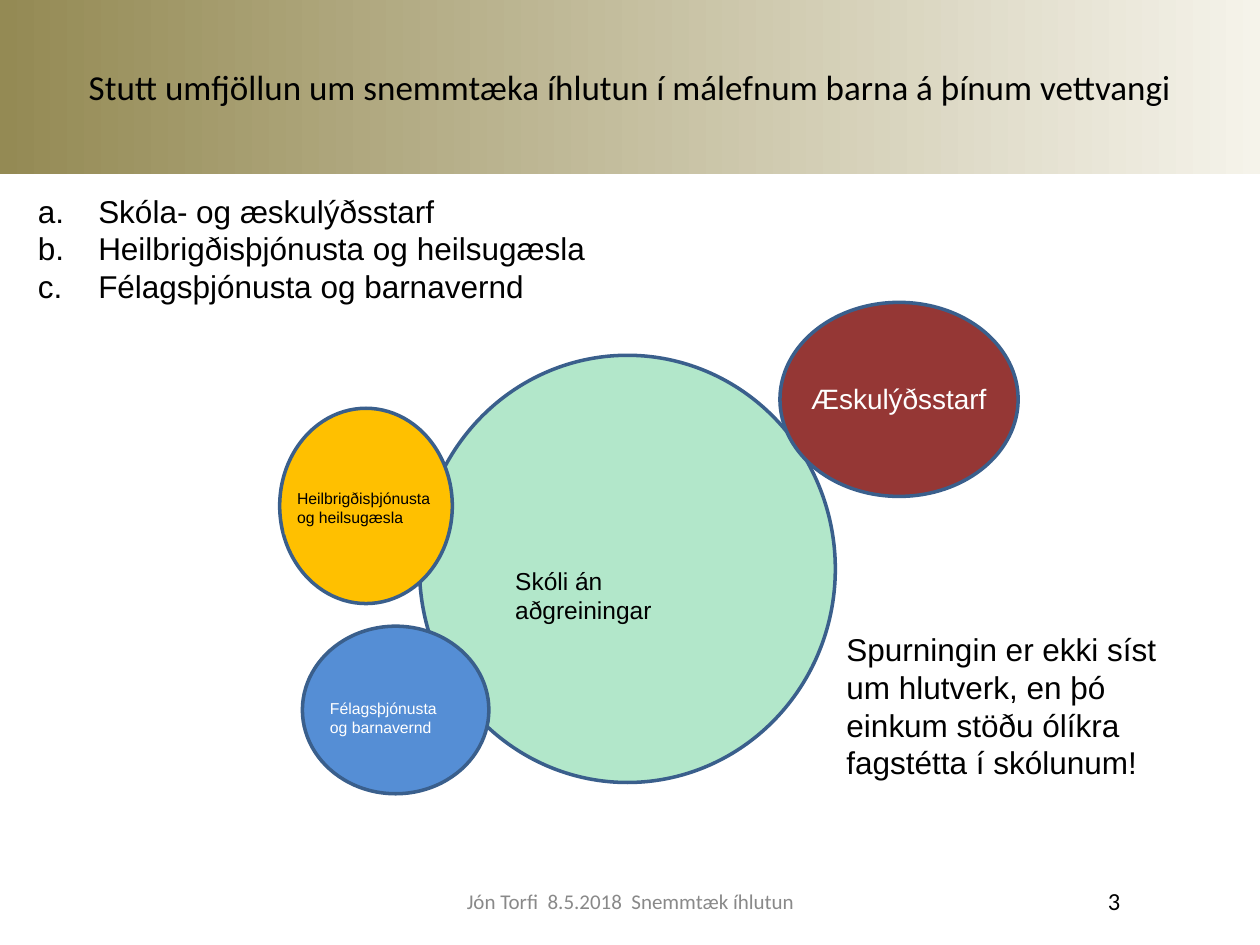
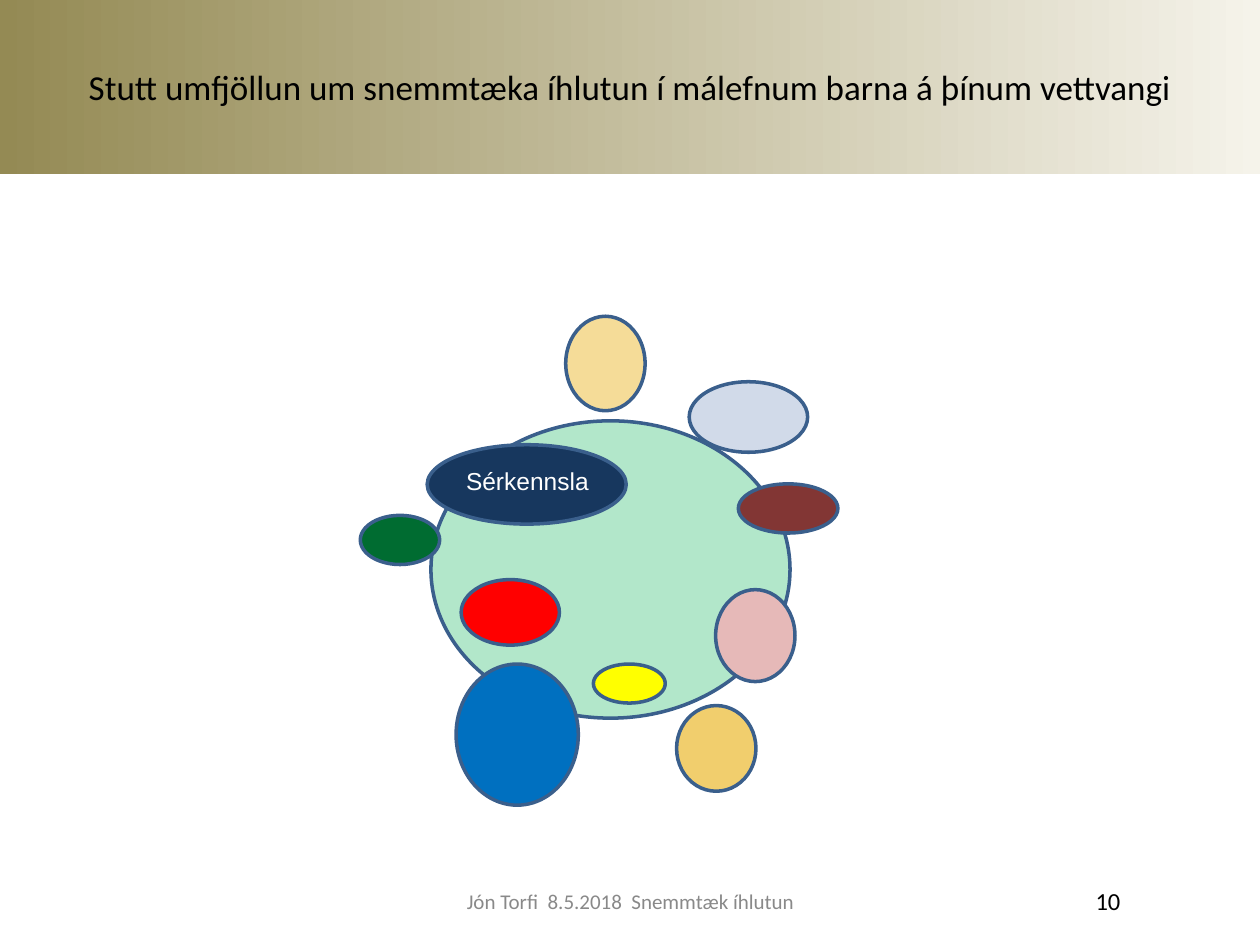
from dataclasses import dataclass
from typing import Optional

from lxml import etree
from pptx import Presentation
from pptx.dml.color import RGBColor
from pptx.enum import shapes, text
from pptx.oxml import ns
from pptx.util import Inches, Pt


@dataclass(frozen=True)
class Theme:
    """Colours, fonts and type sizes shared by the slides."""
    band_start: str = "948A54"
    band_end: str = "F5F3EA"
    outline: str = "3A5F8C"
    school: str = "00B050"
    sand: str = "F1CE6D"
    health: str = "FFC000"
    social: str = "558ED5"
    youth: str = "953735"
    black: str = "000000"
    white: str = "FFFFFF"
    muted: str = "898989"
    heading_font: str = "Calibri"
    body_font: str = "Arial"
    title_size: int = 20
    body_size: int = 18
    large_label: int = 16
    label: int = 14
    footer: int = 12
    small_label: int = 9
    outline_width: int = 2


THEME = Theme()
TITLE = "Stutt umfjöllun um snemmtæka íhlutun í málefnum barna á þínum vettvangi"
FOOTER = "Jón Torfi  8.5.2018  Snemmtæk íhlutun"
TITLE_AND_BODY, TITLE_ONLY = 1, 5

Box = tuple[float, float, float, float]


@dataclass(frozen=True)
class Label:
    words: str
    box: Box
    size: int
    color: str = THEME.white
    fill: Optional[str] = None


@dataclass(frozen=True)
class Bubble:
    box: Box
    fill: str
    opacity: int = 100
    label: Optional[Label] = None


FIELDS = [
    "Skóla- og æskulýðsstarf",
    "Heilbrigðisþjónusta og heilsugæsla",
    "Félagsþjónusta og barnavernd",
]
SERVICE_BUBBLES = [
    Bubble((3.33, 2.82, 3.3, 3.39), THEME.school, 30,
           Label("Skóli án aðgreiningar", (3.99, 4.44, 1.98, 0.32), THEME.label, THEME.black)),
    Bubble((6.19, 2.4, 1.89, 1.54), THEME.youth,
           label=Label("Æskulýðsstarf", (6.34, 2.98, 1.73, 0.37), THEME.large_label)),
    Bubble((2.4, 4.97, 1.48, 1.33), THEME.social,
           label=Label("Félagsþjónusta og barnavernd", (2.52, 5.5, 1.21, 0.4),
                       THEME.small_label, fill=THEME.social)),
    Bubble((2.22, 3.24, 1.37, 1.55), THEME.health,
           label=Label("Heilbrigðisþjónusta og heilsugæsla", (2.26, 3.83, 1.27, 0.41),
                       THEME.small_label, THEME.black, THEME.health)),
]
QUESTION = Label(
    "Spurningin er ekki síst um hlutverk, en þó einkum stöðu ólíkra fagstétta í skólunum!",
    (6.62, 4.95, 2.76, 1.31), THEME.body_size, THEME.black, THEME.white)
SCHOOL_BUBBLES = [
    Bubble((3.42, 3.34, 2.85, 2.36), THEME.school, 30),
    Bubble((4.49, 2.51, 0.63, 0.75), THEME.sand, 70),
    Bubble((2.86, 4.09, 0.63, 0.39), "006C31"),
    Bubble((3.66, 4.6, 0.78, 0.52), "FF0000"),
    Bubble((3.62, 5.27, 0.97, 1.12), "0070C0"),
    Bubble((4.71, 5.27, 0.57, 0.31), "FFFF00"),
    Bubble((5.37, 5.6, 0.63, 0.68), THEME.sand),
    Bubble((5.68, 4.68, 0.63, 0.73), "E6B9B8"),
    Bubble((5.86, 3.84, 0.79, 0.39), "823634"),
    Bubble((5.47, 3.03, 0.94, 0.56), "D1DAE9"),
    Bubble((3.39, 3.53, 1.58, 0.63), "17375E",
           label=Label("Sérkennsla", (3.6, 3.65, 1.32, 0.34), THEME.label)),
]


# Formatting helpers
def apply(target, values: dict) -> None:
    for name, value in values.items():
        setattr(target, name, value)


def place(shape, box: Box) -> None:
    apply(shape, dict(zip(("left", "top", "width", "height"), map(Inches, box))))


def paint(shape, color: str, opacity: int = 100) -> None:
    shape.fill.solid()
    shape.fill.fore_color.rgb = RGBColor.from_string(color)
    if opacity < 100:
        color_element = shape.fill._xPr.find(f".//{ns.qn('a:srgbClr')}")
        etree.SubElement(color_element, ns.qn("a:alpha"), val=str(opacity * 1000))


def write(paragraph, words: str, size: int, color: str, font: str,
          align=text.PP_ALIGN.LEFT) -> None:
    apply(paragraph, {"alignment": align, "space_before": Pt(0)})
    run = paragraph.add_run()
    run.text = words
    apply(run.font, {"name": font, "size": Pt(size)})
    run.font.color.rgb = RGBColor.from_string(color)


# Repeated elements
def add_label(container, label: Label) -> None:
    shape = container.add_textbox(*map(Inches, label.box))
    apply(shape.text_frame, {"word_wrap": True,
                             "auto_size": text.MSO_AUTO_SIZE.SHAPE_TO_FIT_TEXT})
    if label.fill:
        paint(shape, label.fill)
    write(shape.text_frame.paragraphs[0], label.words, label.size, label.color,
          THEME.body_font)


def add_bubble(slide, bubble: Bubble) -> None:
    container = slide.shapes.add_group_shape().shapes if bubble.label else slide.shapes
    shape = container.add_shape(shapes.MSO_SHAPE.OVAL, *map(Inches, bubble.box))
    shape.shadow.inherit = False
    paint(shape, bubble.fill, bubble.opacity)
    shape.line.color.rgb = RGBColor.from_string(THEME.outline)
    shape.line.width = Pt(THEME.outline_width)
    if bubble.label:
        add_label(container, bubble.label)


def add_footer(slide, words: str, box: Box, size: int, color: str, align) -> None:
    shape = slide.shapes.add_textbox(*map(Inches, box))
    apply(shape.text_frame, {"word_wrap": True,
                             "vertical_anchor": text.MSO_ANCHOR.MIDDLE})
    write(shape.text_frame.paragraphs[0], words, size, color, THEME.heading_font, align)


def add_framed_slide(presentation, layout: int, number: int):
    """Add a slide with the title band, the footer and its number."""
    slide = presentation.slides.add_slide(presentation.slide_layouts[layout])
    title = slide.shapes.title
    place(title, (0, 0, 10, 1.38))
    title.fill.gradient()
    title.fill.gradient_angle = 0
    for stop, color in zip(title.fill.gradient_stops, (THEME.band_start, THEME.band_end)):
        stop.color.rgb = RGBColor.from_string(color)
    apply(title.text_frame, {"word_wrap": True, "auto_size": text.MSO_AUTO_SIZE.NONE,
                             "vertical_anchor": text.MSO_ANCHOR.MIDDLE})
    write(title.text_frame.paragraphs[0], TITLE, THEME.title_size, THEME.black,
          THEME.heading_font, text.PP_ALIGN.CENTER)
    add_footer(slide, FOOTER, (3.42, 6.95, 3.17, 0.4), THEME.footer, THEME.muted,
               text.PP_ALIGN.CENTER)
    add_footer(slide, str(number), (7.17, 6.95, 1.82, 0.4), THEME.label, THEME.black,
               text.PP_ALIGN.RIGHT)
    return slide


def fill_lettered_list(body, items: list[str]) -> None:
    place(body, (0.2, 1.47, 5, 1.01))
    frame = body.text_frame
    apply(frame, {"word_wrap": True, "auto_size": text.MSO_AUTO_SIZE.NONE})
    for index, item in enumerate(items):
        paragraph = frame.add_paragraph() if index else frame.paragraphs[0]
        write(paragraph, item, THEME.body_size, THEME.black, THEME.body_font)
        properties = paragraph._p.get_or_add_pPr()
        indent = Inches(0.48)
        properties.set("marL", str(indent))
        properties.set("indent", str(-indent))
        etree.SubElement(properties, ns.qn("a:buFont"), typeface=THEME.body_font)
        etree.SubElement(properties, ns.qn("a:buAutoNum"), type="alphaLcPeriod")


def main() -> None:
    presentation = Presentation()
    apply(presentation, {"slide_width": Inches(10), "slide_height": Inches(7.5)})

    # Services around the inclusive school
    slide = add_framed_slide(presentation, TITLE_AND_BODY, 3)
    fill_lettered_list(slide.placeholders[1], FIELDS)
    for bubble in SERVICE_BUBBLES:
        add_bubble(slide, bubble)
    add_label(slide.shapes, QUESTION)

    # Many roles in and around the school
    slide = add_framed_slide(presentation, TITLE_ONLY, 10)
    for bubble in SCHOOL_BUBBLES:
        add_bubble(slide, bubble)

    presentation.save("out.pptx")


if __name__ == "__main__":
    main()
